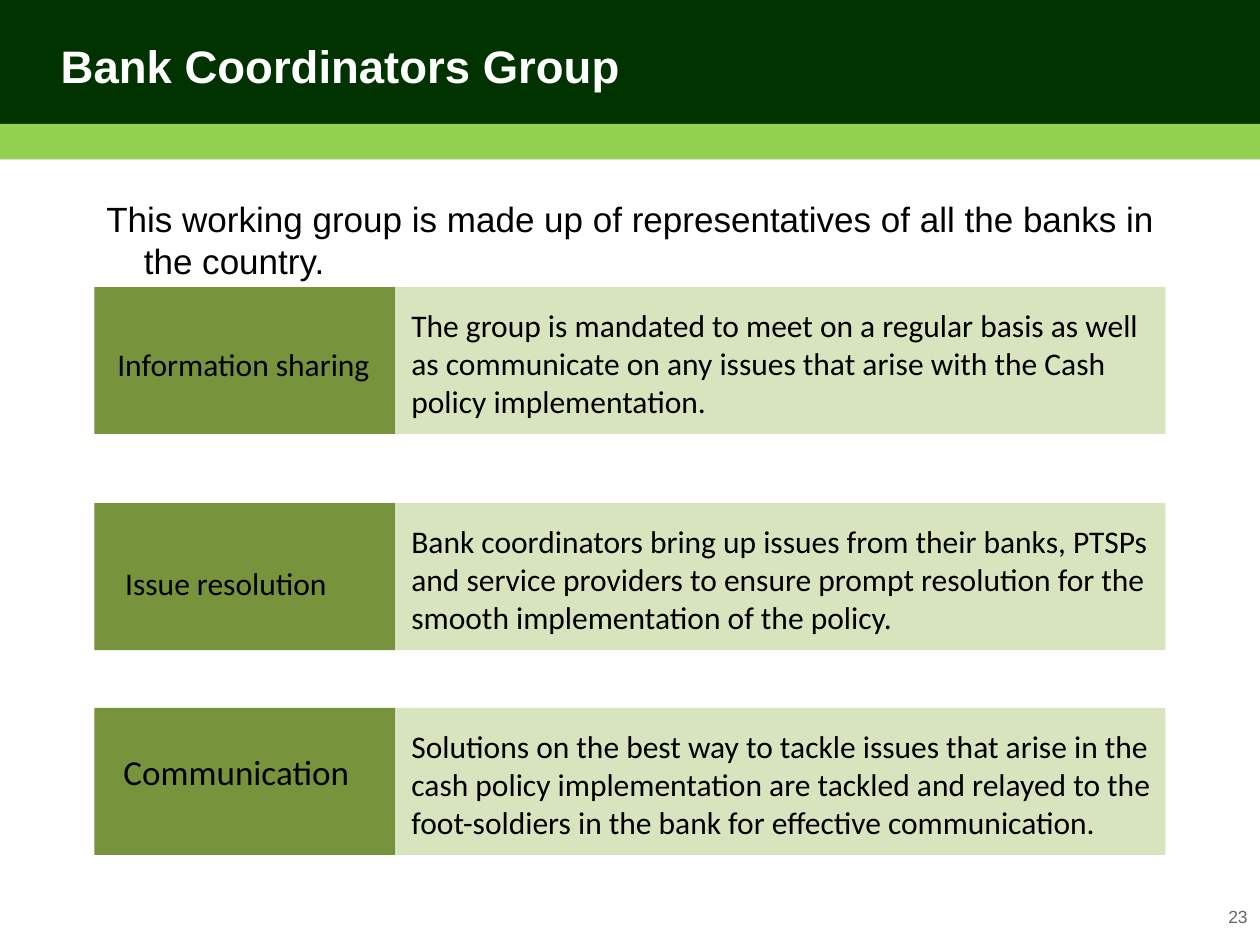
"""Build the slide that presents the Bank Coordinators Group."""
from dataclasses import dataclass

from pptx import Presentation
from pptx.dml.color import RGBColor
from pptx.enum.shapes import MSO_SHAPE
from pptx.enum.text import MSO_ANCHOR, MSO_AUTO_SIZE, PP_ALIGN
from pptx.oxml.ns import qn
from pptx.shapes.autoshape import Shape
from pptx.slide import Slide
from pptx.util import Pt

RECTANGLE = MSO_SHAPE.RECTANGLE
TOP = MSO_ANCHOR.TOP
NO_AUTOFIT = MSO_AUTO_SIZE.NONE
LEFT = PP_ALIGN.LEFT
RIGHT = PP_ALIGN.RIGHT


@dataclass(frozen=True)
class Theme:
    heading_font: str = "Arial"
    row_font: str = "Calibri"
    header: str = "003300"
    accent: str = "92D050"
    label_fill: str = "77933C"
    detail_fill: str = "D7E4BD"
    light: str = "FFFFFF"
    dark: str = "000000"
    muted: str = "666666"
    title_size: float = 26
    intro_size: float = 20
    row_size: float = 18
    number_size: float = 10


@dataclass(frozen=True)
class Box:
    left: float
    top: float
    width: float
    height: float


@dataclass(frozen=True)
class TextStyle:
    font: str
    size: float
    color: str
    bold: bool = False
    align: PP_ALIGN = LEFT


@dataclass(frozen=True)
class Row:
    top: float
    label: str
    label_left: float
    label_offset: float
    label_size: float
    detail: str
    detail_width: float = 438


THEME = Theme()
SLIDE_WIDTH, SLIDE_HEIGHT = 720, 540
ROW_HEIGHT = 84
LABEL_LEFT, LABEL_WIDTH = 54, 172
DETAIL_LEFT, DETAIL_WIDTH = 226.5, 439.5
DETAIL_TEXT_LEFT, DETAIL_OFFSET = 228, 7.5

ROWS = (
    Row(164, "Information sharing", 60, 29.5, THEME.row_size,
        "The group is mandated to meet on a regular basis as well as communicate "
        "on any issues that arise with the Cash policy implementation."),
    Row(287.5, "Issue resolution", 64.5, 31, THEME.row_size,
        "Bank coordinators bring up issues from their banks, PTSPs and service "
        "providers to ensure prompt resolution for the smooth implementation of "
        "the policy."),
    Row(404.5, "Communication", 63.5, 21, THEME.intro_size,
        "Solutions on the best way to tackle issues that arise in the cash policy "
        "implementation are tackled and relayed to the foot-soldiers in the bank "
        "for effective communication.", 444),
)


def place(shape: Shape, box: Box) -> None:
    """Move and size a shape."""
    shape.left, shape.top = Pt(box.left), Pt(box.top)
    shape.width, shape.height = Pt(box.width), Pt(box.height)


def write(shape: Shape, text: str, style: TextStyle) -> None:
    """Put one styled run into a shape."""
    frame = shape.text_frame
    frame.word_wrap = True
    frame.auto_size = NO_AUTOFIT
    frame.vertical_anchor = TOP
    paragraph = frame.paragraphs[0]
    paragraph.alignment = style.align
    paragraph.space_before = Pt(0)
    run = paragraph.add_run()
    run.text = text
    run.font.name = style.font
    run.font.size = Pt(style.size)
    run.font.bold = style.bold
    run.font.color.rgb = RGBColor.from_string(style.color)


def add_rectangle(slide: Slide, box: Box, color: str) -> Shape:
    """Add a plain filled rectangle."""
    shape = slide.shapes.add_shape(RECTANGLE, 0, 0, 0, 0)
    place(shape, box)
    shape.shadow.inherit = False
    shape.fill.solid()
    shape.fill.fore_color.rgb = RGBColor.from_string(color)
    shape.line.fill.background()
    return shape


def add_text(slide: Slide, box: Box, text: str, style: TextStyle) -> None:
    """Add a text box."""
    shape = slide.shapes.add_textbox(0, 0, 0, 0)
    place(shape, box)
    write(shape, text, style)


def add_header(slide: Slide) -> None:
    """Draw the header bands and fill the title."""
    title = slide.shapes.title
    for box, color in ((Box(0, 0, SLIDE_WIDTH, 91), THEME.header),
                       (Box(0, 70.75, SLIDE_WIDTH, 20.25), THEME.accent)):
        title.element.addprevious(add_rectangle(slide, box, color).element)
    place(title, Box(27.5, 18, 553, 51))
    write(title, "Bank Coordinators Group",
          TextStyle(THEME.heading_font, THEME.title_size, THEME.light, True))


def add_intro(slide: Slide) -> None:
    """Fill the body with a hanging paragraph."""
    body = slide.placeholders[1]
    place(body, Box(48, 109, 624, 366))
    properties = body.text_frame.paragraphs[0]._p.get_or_add_pPr()
    properties.set("marL", str(Pt(27)))
    properties.set("indent", str(Pt(-21.5)))
    properties.append(properties.makeelement(qn("a:buNone"), {}))
    write(body, "This working group is made up of representatives of all the "
                "banks in the country.",
          TextStyle(THEME.heading_font, THEME.intro_size, THEME.dark))


def add_row(slide: Slide, row: Row) -> None:
    """Draw one labelled row."""
    add_rectangle(slide, Box(LABEL_LEFT, row.top, LABEL_WIDTH, ROW_HEIGHT),
                  THEME.label_fill)
    add_rectangle(slide, Box(DETAIL_LEFT, row.top, DETAIL_WIDTH, ROW_HEIGHT),
                  THEME.detail_fill)
    add_text(slide, Box(row.label_left, row.top + row.label_offset, 161, 30),
             row.label, TextStyle(THEME.row_font, row.label_size, THEME.dark))
    add_text(slide, Box(DETAIL_TEXT_LEFT, row.top + DETAIL_OFFSET,
                        row.detail_width, 73),
             row.detail, TextStyle(THEME.row_font, THEME.row_size, THEME.dark))


def main() -> None:
    """Build and save the presentation."""
    presentation = Presentation()
    presentation.slide_width = Pt(SLIDE_WIDTH)
    presentation.slide_height = Pt(SLIDE_HEIGHT)
    slide = presentation.slides.add_slide(presentation.slide_layouts[1])
    add_header(slide)
    add_intro(slide)
    for row in ROWS:
        add_row(slide, row)
    add_text(slide, Box(693, 514, 27, 26), "23",
             TextStyle(THEME.heading_font, THEME.number_size, THEME.muted,
                       align=RIGHT))
    presentation.save("out.pptx")


if __name__ == "__main__":
    main()
